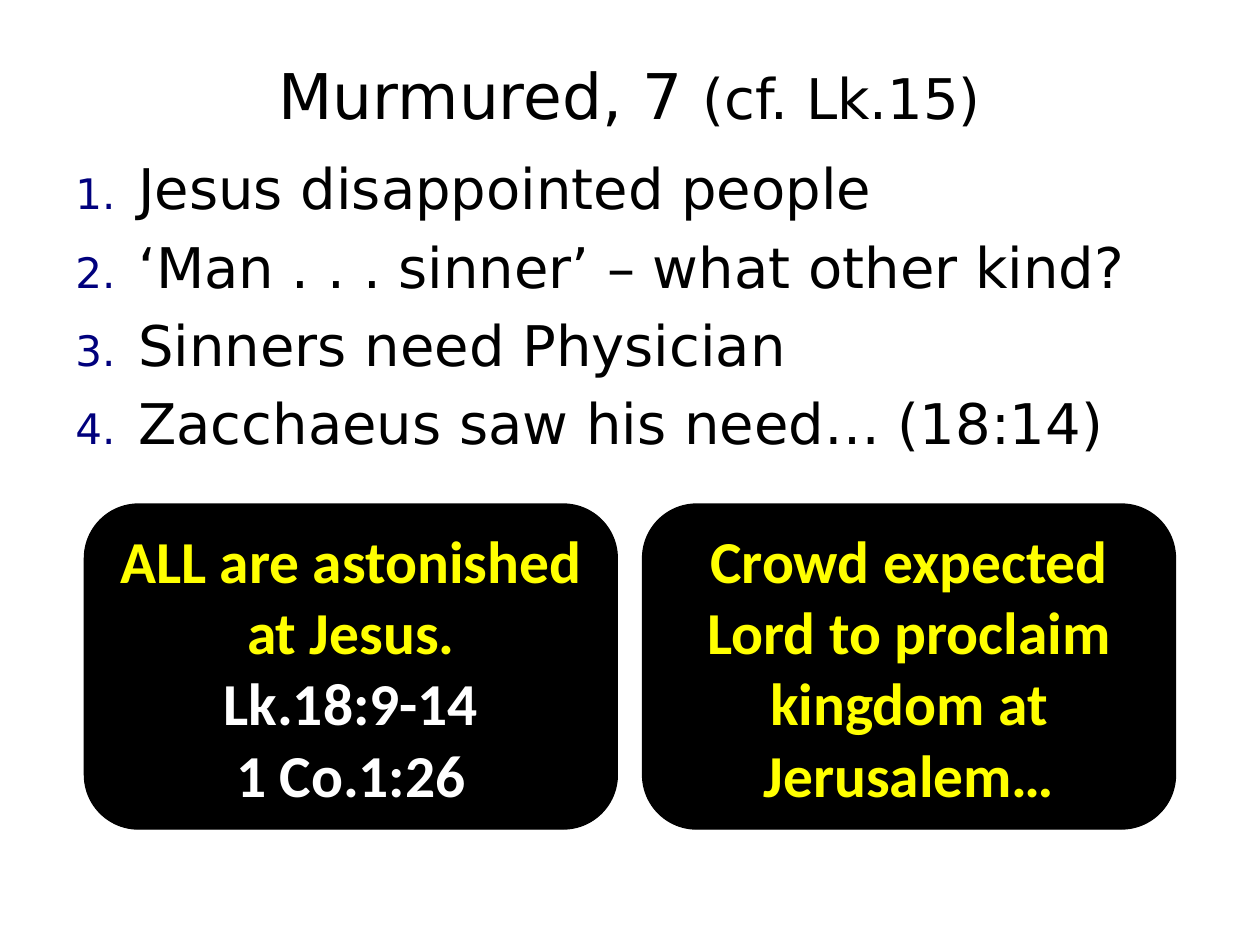
from lxml.etree import SubElement
from pptx import Presentation
from pptx.dml.color import RGBColor
from pptx.enum.shapes import MSO_SHAPE
from pptx.enum.text import MSO_ANCHOR, PP_ALIGN
from pptx.oxml.ns import qn
from pptx.util import Inches, Pt

BLACK = RGBColor(0x00, 0x00, 0x00)
WHITE = RGBColor(0xFF, 0xFF, 0xFF)
YELLOW = RGBColor(0xFF, 0xFF, 0x00)
NAVY = RGBColor(0x00, 0x00, 0x7D)

TITLE_FORMAT = {"name": "DejaVu Sans", "size": Pt(36)}
BODY_FORMAT = {"name": "DejaVu Sans", "size": Pt(32)}
PANEL_FORMAT = {"name": "Calibri", "size": Pt(34), "bold": True}

POINTS = [
    "Jesus disappointed people",
    "‘Man . . . sinner’ – what other kind?",
    "Sinners need Physician",
    "Zacchaeus saw his need… (18:14)",
]
PANELS = [
    [
        ("ALL are astonished at Jesus.", YELLOW),
        ("Lk.18:9-14", WHITE),
        ("1 Co.1:26", WHITE),
    ],
    [("Crowd expected Lord to proclaim kingdom at\vJerusalem…", YELLOW)],
]
PANEL_LEFT, PANEL_TOP, PANEL_WIDTH, PANEL_HEIGHT = 0.67, 4, 4.23, 2.58
PANEL_GAP = 0.2


def add_paragraph(text_frame, index):
    return text_frame.add_paragraph() if index else text_frame.paragraphs[0]


def format_font(font, color, values):
    for attribute, value in values.items():
        setattr(font, attribute, value)
    font.color.rgb = color


def add_run(paragraph, text, color, values):
    run = paragraph.add_run()
    run.text = text
    format_font(run.font, color, values)


def add_text_frame(slide, left, top, width, height):
    box = slide.shapes.add_textbox(
        Inches(left), Inches(top), Inches(width), Inches(height)
    )
    box.text_frame.word_wrap = True
    return box.text_frame


def number_paragraph(paragraph):
    properties = paragraph._p.get_or_add_pPr()
    properties.set("marL", str(Inches(0.5)))
    properties.set("indent", str(Inches(-0.5)))
    spacing = SubElement(properties, qn("a:spcBef"))
    SubElement(spacing, qn("a:spcPct"), val="20000")
    bullet_color = SubElement(properties, qn("a:buClr"))
    SubElement(bullet_color, qn("a:srgbClr"), val=str(NAVY))
    SubElement(properties, qn("a:buSzPct"), val="75000")
    SubElement(properties, qn("a:buFont"), typeface="DejaVu Sans")
    SubElement(properties, qn("a:buAutoNum"), type="arabicPeriod")


def add_title(slide):
    text_frame = add_text_frame(slide, 0.5, 0, 9, 1.5)
    text_frame.vertical_anchor = MSO_ANCHOR.MIDDLE
    paragraph = text_frame.paragraphs[0]
    paragraph.alignment = PP_ALIGN.CENTER
    add_run(paragraph, "Murmured, 7 ", BLACK, TITLE_FORMAT)
    add_run(paragraph, "(cf. Lk.15)", BLACK, BODY_FORMAT)


def add_numbered_list(slide):
    text_frame = add_text_frame(slide, 0.5, 1.17, 9, 5.58)
    for index, point in enumerate(POINTS):
        paragraph = add_paragraph(text_frame, index)
        number_paragraph(paragraph)
        add_run(paragraph, point, BLACK, BODY_FORMAT)


def add_panel(slide, left, lines):
    panel = slide.shapes.add_shape(
        MSO_SHAPE.ROUNDED_RECTANGLE,
        Inches(left),
        Inches(PANEL_TOP),
        Inches(PANEL_WIDTH),
        Inches(PANEL_HEIGHT),
    )
    panel.shadow.inherit = False
    panel.fill.solid()
    panel.fill.fore_color.rgb = BLACK
    panel.line.color.rgb = BLACK
    panel.line.width = Pt(0.75)
    text_frame = panel.text_frame
    text_frame.word_wrap = True
    text_frame.vertical_anchor = MSO_ANCHOR.MIDDLE
    for index, (text, color) in enumerate(lines):
        paragraph = add_paragraph(text_frame, index)
        paragraph.alignment = PP_ALIGN.CENTER
        paragraph.text = text
        for run in paragraph.runs:
            format_font(run.font, color, PANEL_FORMAT)


def main():
    presentation = Presentation()
    presentation.slide_width = Inches(10)
    presentation.slide_height = Inches(7.5)
    slide = presentation.slides.add_slide(presentation.slide_layouts[6])
    add_title(slide)
    add_numbered_list(slide)
    for column, lines in enumerate(PANELS):
        add_panel(slide, PANEL_LEFT + column * (PANEL_WIDTH + PANEL_GAP), lines)
    presentation.save("out.pptx")


if __name__ == "__main__":
    main()
